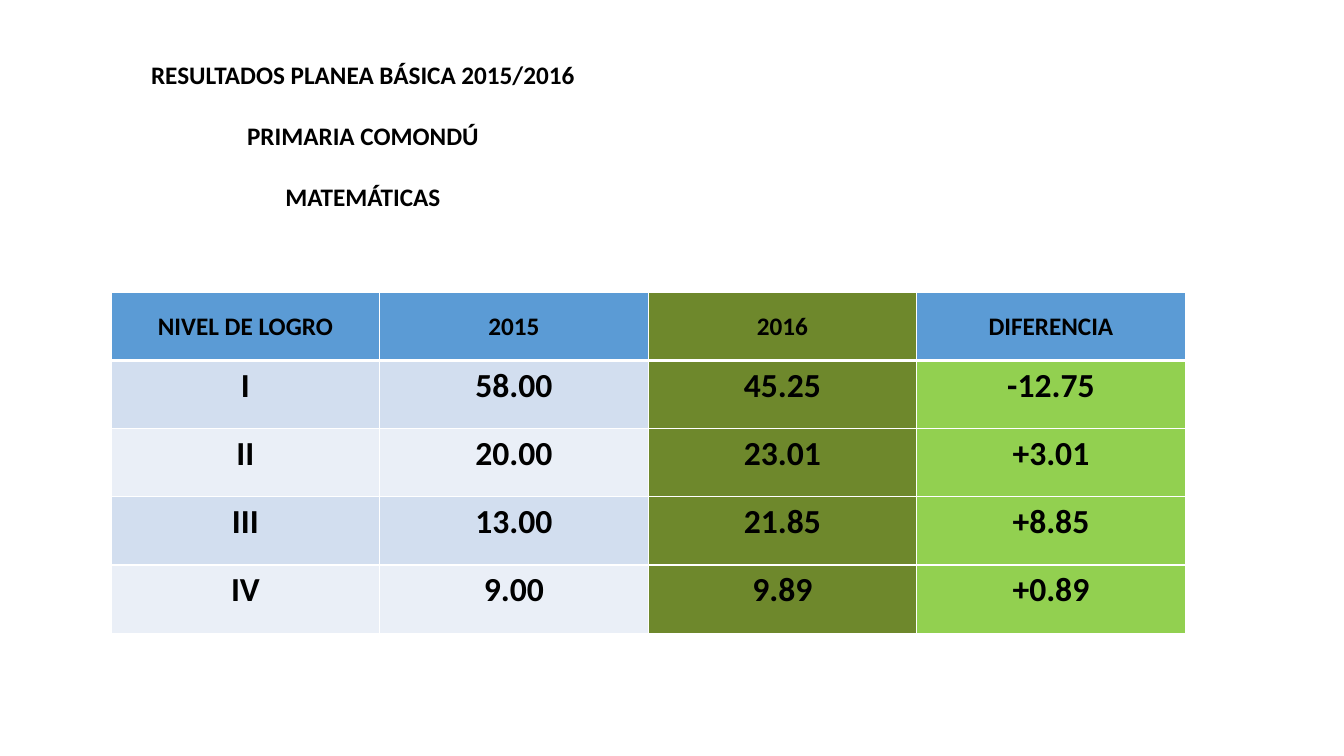
from lxml import etree
from pptx import Presentation
from pptx.dml.color import RGBColor
from pptx.enum.text import MSO_ANCHOR, MSO_AUTO_SIZE, PP_ALIGN
from pptx.oxml.ns import qn
from pptx.util import Pt

FONT = "Calibri"
COLORS = {
    "text": "000000",
    "border": "FFFFFF",
    "header": "5B9BD5",
    "band_dark": "D2DEEF",
    "band_light": "EAEFF7",
    "year_2016": "6E882C",
    "difference": "92D050",
}
HEADING = ["RESULTADOS PLANEA BÁSICA 2015/2016", "PRIMARIA COMONDÚ", "MATEMÁTICAS"]
RESULTS = [
    ["NIVEL DE LOGRO", "2015", "2016", "DIFERENCIA"],
    ["I", "58.00", "45.25", "-12.75"],
    ["II", "20.00", "23.01", "+3.01"],
    ["III", "13.00", "21.85", "+8.85"],
    ["IV", "9.00", "9.89", "+0.89"],
]


def rgb(name):
    return RGBColor.from_string(COLORS[name])


def format_paragraph(p, size):
    p.alignment = PP_ALIGN.CENTER
    p.font.name = FONT
    p.font.size = Pt(size)
    p.font.bold = True
    p.font.color.rgb = rgb("text")


def set_borders(cell, top, bottom):
    tc_pr = cell._tc.get_or_add_tcPr()
    for side, width in (("L", 1), ("R", 1), ("T", top), ("B", bottom)):
        ln = etree.SubElement(tc_pr, qn(f"a:ln{side}"), w=str(Pt(width)))
        fill = etree.SubElement(ln, qn("a:solidFill"))
        etree.SubElement(fill, qn("a:srgbClr"), val=COLORS["border"])


def fill_name(row, col):
    if col == 2:
        return "year_2016"
    if row == 0:
        return "header"
    if col == 3:
        return "difference"
    return "band_dark" if row % 2 else "band_light"


def add_heading(slide, left, top, width, height):
    title = slide.shapes.title
    title.left, title.top = Pt(left), Pt(top)
    title.width, title.height = Pt(width), Pt(height)
    tf = title.text_frame
    tf.word_wrap = True
    tf.auto_size = MSO_AUTO_SIZE.NONE
    tf.vertical_anchor = MSO_ANCHOR.TOP
    tf.text = "\n".join(HEADING)
    for i, p in enumerate(tf.paragraphs):
        format_paragraph(p, 18)
        p.line_spacing = 1.0
        p.space_before = Pt(22 if i else 0)


def add_results(slide, left, top, width, height):
    frame = slide.shapes.add_table(
        len(RESULTS), len(RESULTS[0]), Pt(left), Pt(top), Pt(width), Pt(height))
    table = frame.table
    for column in table.columns:
        column.width = Pt(width / len(RESULTS[0]))
    for r, values in enumerate(RESULTS):
        table.rows[r].height = Pt(height / len(RESULTS))
        for c, value in enumerate(values):
            cell = table.cell(r, c)
            cell.text = value
            cell.vertical_anchor = MSO_ANCHOR.TOP if r else MSO_ANCHOR.MIDDLE
            format_paragraph(cell.text_frame.paragraphs[0], 24 if r else 18)
            # A thicker rule separates the header from the results
            set_borders(cell, top=3 if r == 1 else 1, bottom=1 if r else 3)
            cell.fill.solid()
            cell.fill.fore_color.rgb = rgb(fill_name(r, c))


def main():
    prs = Presentation()
    prs.slide_width, prs.slide_height = Pt(960), Pt(540)
    slide = prs.slides.add_slide(prs.slide_layouts[5])
    # Heading
    add_heading(slide, 57.6, 38.9, 403.2, 116.6)
    # Results by achievement level
    add_results(slide, 79.4, 208.8, 767.2, 243.5)
    prs.save("out.pptx")


if __name__ == "__main__":
    main()
